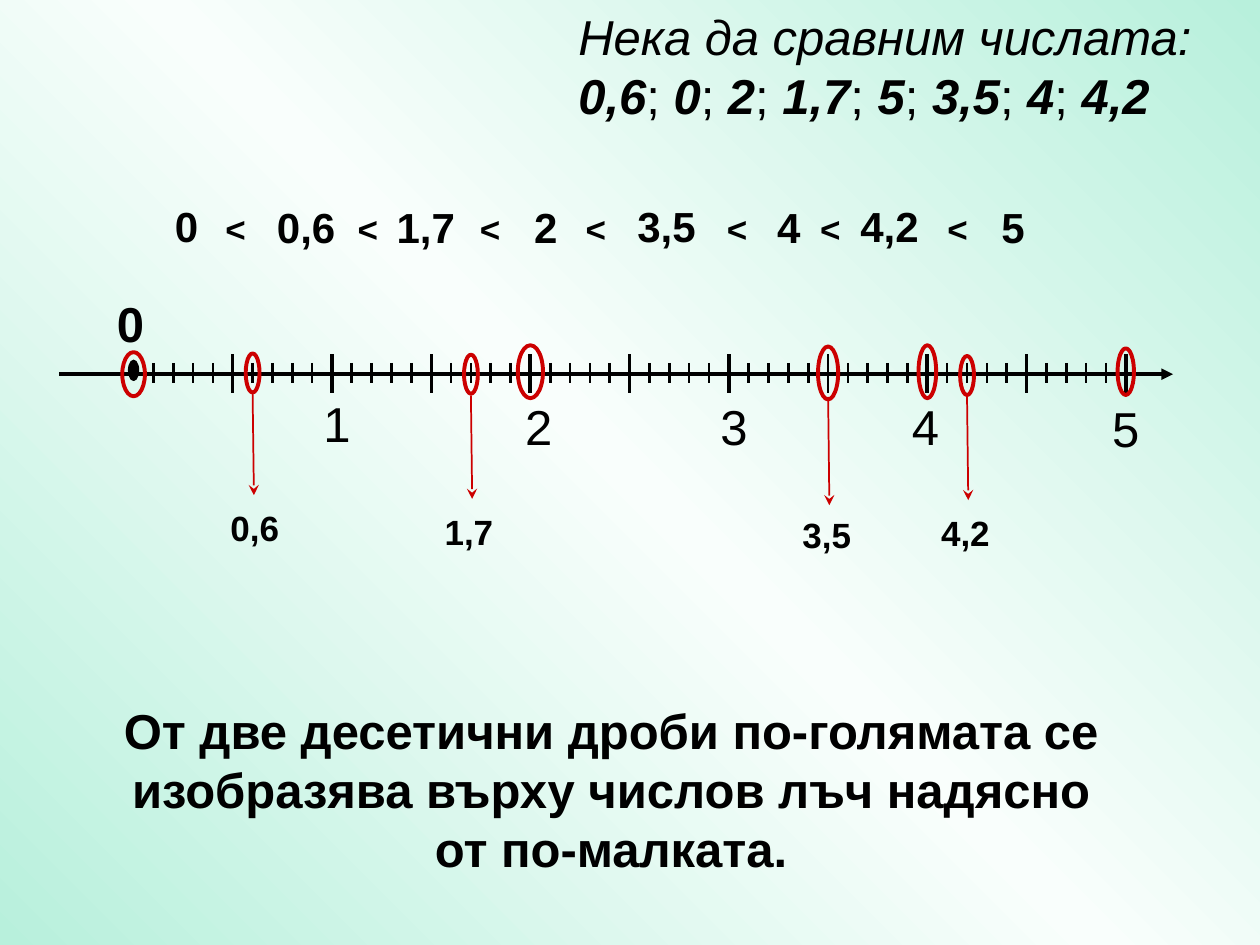
from copy import deepcopy

from lxml import etree
from pptx import Presentation
from pptx import util as u
from pptx.dml.color import RGBColor
from pptx.enum import shapes, text
from pptx.oxml.ns import qn

BLACK, RED = "000000", "CC0000"
AXIS_Y, ZERO_X, UNIT = 2.97, 1.06, 1.575


def color(value):
    return RGBColor.from_string(value)


def axis_x(number):
    return ZERO_X + UNIT * number


def set_background(slide):
    fill = slide.background.fill
    fill.gradient()
    fill.gradient_angle = 45
    for stop in fill.gradient_stops:
        stop.color.rgb = color("B8F0DC")
    # A third stop gives the light band in the middle
    first = next(slide.element.iter(qn("a:gs")))
    first.addnext(deepcopy(first))
    middle = fill.gradient_stops[1]
    middle.position = 0.5
    middle.color.rgb = color("F9FEFC")


def format_run(run, size, bold=False, italic=False):
    font = run.font
    font.name, font.size = "Arial", u.Pt(size)
    font.bold, font.italic = bold, italic
    font.color.rgb = color(BLACK)


def add_text(slide, content, left, top, width, height, size, bold=True,
             align=text.PP_ALIGN.LEFT, anchor=text.MSO_ANCHOR.TOP):
    box = slide.shapes.add_textbox(*map(u.Inches, (left, top, width, height)))
    frame = box.text_frame
    frame.word_wrap = True
    frame.vertical_anchor = anchor
    frame.text = content
    paragraph = frame.paragraphs[0]
    paragraph.alignment = align
    format_run(paragraph.runs[0], size, bold)


def add_line(slide, start, end, line_color, width, arrow=None):
    connector = slide.shapes.add_connector(
        shapes.MSO_CONNECTOR.STRAIGHT, *map(u.Inches, (*start, *end)))
    connector.line.color.rgb = color(line_color)
    connector.line.width = u.Pt(width)
    if arrow:
        line = connector.line._get_or_add_ln()
        etree.SubElement(line, qn("a:tailEnd"), type=arrow)
    properties = connector._element.spPr
    etree.SubElement(properties, qn("a:effectLst"))


def add_ellipse(slide, center_x, center_y, width, height, line_color,
                line_width, fill=None):
    ellipse = slide.shapes.add_shape(
        shapes.MSO_SHAPE.OVAL, u.Inches(center_x - width / 2),
        u.Inches(center_y - height / 2), u.Inches(width), u.Inches(height))
    ellipse.shadow.inherit = False
    if fill:
        ellipse.fill.solid()
        ellipse.fill.fore_color.rgb = color(fill)
    else:
        ellipse.fill.background()
    ellipse.line.color.rgb = color(line_color)
    ellipse.line.width = u.Pt(line_width)


def add_heading(slide, numbers):
    title = slide.shapes.title
    title.left, title.top = u.Inches(4.49), u.Inches(0)
    title.width, title.height = u.Inches(5.24), u.Inches(1.03)
    frame = title.text_frame
    frame.auto_size = text.MSO_AUTO_SIZE.NONE
    frame.vertical_anchor = text.MSO_ANCHOR.TOP
    frame.word_wrap = True
    paragraph = frame.paragraphs[0]
    paragraph.alignment = text.PP_ALIGN.LEFT

    def add_run(content, **style):
        run = paragraph.add_run()
        run.text = content
        format_run(run, 28, **style)

    add_run("Нека да сравним числата: ", italic=True)
    for index, number in enumerate(numbers):
        if index:
            add_run("; ")
        add_run(number, bold=True, italic=True)


def add_ordering(slide):
    """The numbers from smallest to largest, with signs between them."""
    numbers = [("0", 1.29, 1.54), ("0,6", 2.1, 1.55), ("1,7", 3.05, 1.55),
               ("2", 4.14, 1.55), ("3,5", 4.96, 1.54), ("4", 6.07, 1.55),
               ("4,2", 6.73, 1.54), ("5", 7.85, 1.55)]
    for number, left, top in numbers:
        width = 0.8 if "," in number else 0.46
        add_text(slide, number, left, top, width, 0.5, 24)
    for left in (1.69, 2.74, 3.71, 4.55, 5.67, 6.41, 7.42):
        add_text(slide, "<", left, 1.6, 0.39, 0.43, 20)


def add_number_line(slide):
    add_line(slide, (0.47, AXIS_Y), (9.31, AXIS_Y), BLACK, 2.25, "triangle")
    add_ellipse(slide, ZERO_X, 2.94, 0.08, 0.16, BLACK, 0.75, BLACK)
    # Tenths, with longer marks at halves and thicker ones at whole numbers
    for tenth in range(1, 51):
        x = axis_x(tenth / 10)
        top, bottom = (2.88, 3.04) if tenth % 5 else (2.81, 3.12)
        add_line(slide, (x, top), (x, bottom), BLACK,
                 1.5 if tenth % 10 else 2.25)
    # Whole numbers
    add_text(slide, "0", 0.83, 2.28, 0.63, 0.57, 28)
    labels = [(2.44, 3.24), (4.04, 3.26), (5.59, 3.26), (7.11, 3.26),
              (8.7, 3.28)]
    for number, (left, top) in enumerate(labels, start=1):
        add_text(slide, str(number), left, top, 0.47, 0.24, 28, bold=False,
                 align=text.PP_ALIGN.CENTER, anchor=text.MSO_ANCHOR.MIDDLE)


def add_marked_numbers(slide):
    # Value, then ring centre height, width and height
    rings = [(0, 2.97, 0.18, 0.35), (0.6, 2.96, 0.11, 0.31),
             (1.7, 2.97, 0.11, 0.31), (2, 2.95, 0.2, 0.42),
             (3.5, 2.96, 0.16, 0.42), (4, 2.95, 0.14, 0.42),
             (4.2, 2.98, 0.11, 0.31), (5, 2.95, 0.13, 0.37)]
    for value, center_y, width, height in rings:
        add_ellipse(slide, axis_x(value), center_y, width, height, RED, 2.25)
    # Value, then arrow start and end, label left and top
    fractions = [(0.6, 3.11, 3.93, 1.73, 3.97), (1.7, 3.14, 3.96, 3.43, 4.0),
                 (3.5, 3.15, 4.01, 6.27, 4.03), (4.2, 3.15, 3.97, 7.37, 4.01)]
    for value, start, end, left, top in fractions:
        x = axis_x(value)
        add_line(slide, (x, start), (x + 0.01, end), RED, 1, "stealth")
        add_text(slide, str(value).replace(".", ","), left, top, 0.62, 0.43, 20)


def main():
    presentation = Presentation()
    presentation.slide_width = u.Inches(10)
    presentation.slide_height = u.Inches(7.5)
    slide = presentation.slides.add_slide(presentation.slide_layouts[5])
    set_background(slide)
    add_heading(slide, ["0,6", "0", "2", "1,7", "5", "3,5", "4", "4,2"])
    add_ordering(slide)
    add_number_line(slide)
    add_marked_numbers(slide)
    # Rule
    add_text(slide, "От две десетични дроби по-голямата се изобразява върху "
             "числов лъч надясно от по-малката.", 0.81, 5.51, 8.08, 1.5, 28,
             align=text.PP_ALIGN.CENTER)
    presentation.save("out.pptx")


if __name__ == "__main__":
    main()
